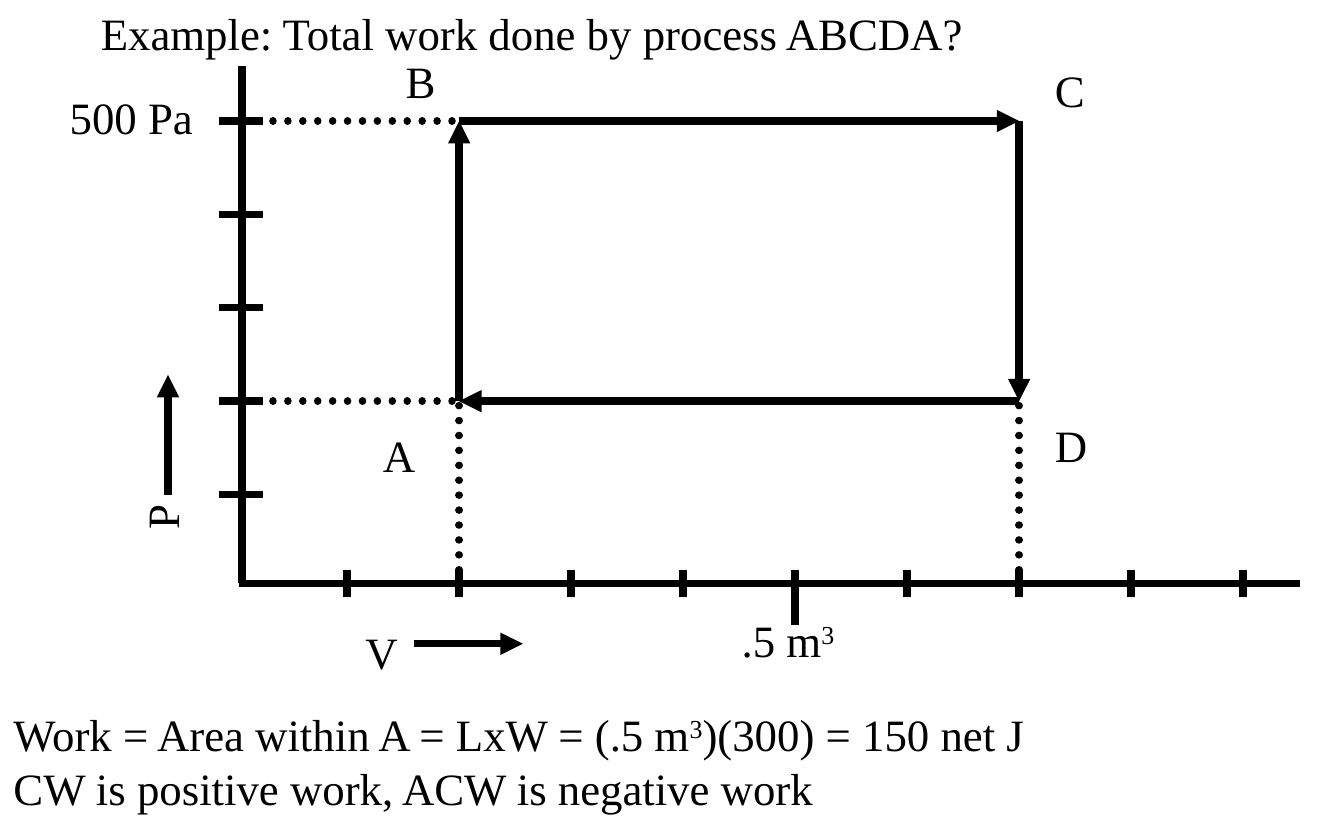
from lxml import etree
from pptx import Presentation
from pptx import util as u
from pptx.dml.color import RGBColor
from pptx.enum import dml, shapes, text
from pptx.oxml import ns

BLACK = RGBColor(0x00, 0x00, 0x00)
FONT = "Times New Roman"
LABEL_HEIGHT = 0.5

# Diagram grid: volume in columns, pressure in rows
ORIGIN_X, ORIGIN_Y = 1.75, 4.375
COLUMN, ROW = 10 / 12, 0.695
AXIS_X, AXIS_Y = 1.8, 4.34
V_LOW, V_MID, V_HIGH = 2, 5, 7
P_LOW, P_HIGH = 2, 5


def grid(volume, pressure):
    return ORIGIN_X + volume * COLUMN, ORIGIN_Y - pressure * ROW


def draw_line(slide, start, end, arrow=False, dotted=False):
    ends = [u.Inches(value) for value in (*start, *end)]
    stroke = slide.shapes.add_connector(shapes.MSO_CONNECTOR.STRAIGHT, *ends)
    stroke.line.color.rgb = BLACK
    stroke.line.width = u.Pt(4)
    properties = stroke._element.spPr
    outline = properties.find(ns.qn("a:ln"))
    if dotted:
        stroke.line.dash_style = dml.MSO_LINE.ROUND_DOT
        outline.set("cap", "rnd")
    if arrow:
        etree.SubElement(outline, ns.qn("a:tailEnd"), type="triangle")
    etree.SubElement(properties, ns.qn("a:effectLst"))


def place(shape, left, top, width, height):
    shape.left, shape.top = u.Inches(left), u.Inches(top)
    shape.width, shape.height = u.Inches(width), u.Inches(height)


def write(frame, lines, wrap=False):
    """Fill a frame; text between carets is superscript."""
    frame.word_wrap = wrap
    frame.auto_size = text.MSO_AUTO_SIZE.NONE
    frame.vertical_anchor = text.MSO_ANCHOR.TOP
    for number, line in enumerate(lines):
        paragraph = frame.add_paragraph() if number else frame.paragraphs[0]
        paragraph.alignment = text.PP_ALIGN.LEFT
        paragraph.space_before = u.Pt(0)
        for index, piece in enumerate(line.split("^")):
            if not piece:
                continue
            run = paragraph.add_run()
            run.text = piece
            run.font.name, run.font.size = FONT, u.Pt(24)
            run.font.color.rgb = BLACK
            if index % 2:
                run._r.get_or_add_rPr().set("baseline", "30000")


def add_label(slide, wording, left, top, width, rotation=0):
    label = slide.shapes.add_textbox(0, 0, 0, 0)
    place(label, left, top, width, LABEL_HEIGHT)
    label.rotation = rotation
    write(label.text_frame, [wording])


def add_axes(slide):
    draw_line(slide, (AXIS_X, 0.49), (AXIS_X, AXIS_Y))
    draw_line(slide, (AXIS_X - 0.02, AXIS_Y), (9.67, AXIS_Y))
    for pressure in range(1, 6):
        y = grid(0, pressure)[1]
        draw_line(slide, (1.63, y), (1.96, y))
    for volume in range(1, 10):
        x = grid(volume, 0)[0]
        bottom = 4.65 if volume == V_MID else 4.44
        draw_line(slide, (x, 4.24), (x, bottom))
    # Axis directions
    draw_line(slide, (3.08, 4.79), (3.89, 4.79), arrow=True)
    draw_line(slide, (1.25, 3.68), (1.25, 2.79), arrow=True)


def add_cycle(slide):
    a, b = grid(V_LOW, P_LOW), grid(V_LOW, P_HIGH)
    c, d = grid(V_HIGH, P_HIGH), grid(V_HIGH, P_LOW)
    # Dotted guides to the axes
    for corner in (a, b):
        draw_line(slide, (1.92, corner[1]), corner, dotted=True)
    for corner in (a, d):
        draw_line(slide, (corner[0], 4.24), corner, dotted=True)
    # Process A-B-C-D-A
    for start, end in ((a, b), (b, c), (c, d), (d, a)):
        draw_line(slide, start, end, arrow=True)


def add_labels(slide):
    for wording, left, top, width in (
        ("A", 2.75, 3.13, 0.45),
        ("B", 2.92, 0.35, 0.43),
        ("C", 7.75, 0.42, 0.43),
        ("D", 7.75, 3.06, 0.45),
        ("V", 2.62, 4.6, 0.44),
        ("500 Pa", 0.42, 0.62, 1.13),
        (".5 m^3^", 5.42, 4.51, 0.91),
    ):
        add_label(slide, wording, left, top, width)
    add_label(slide, "P", 1.01, 3.6, 0.38, rotation=270)


def add_title_and_answer(slide):
    title, answer = slide.placeholders
    place(title, 0.65, -0.01, 6.68, LABEL_HEIGHT)
    write(title.text_frame, ["Example: Total work done by process ABCDA?"])
    place(answer, 0, 5.21, 10, 0.91)
    write(answer.text_frame, [
        "Work = Area within A = LxW = (.5 m^3^)(300) = 150 net J",
        "CW is positive work, ACW is negative work",
    ], wrap=True)
    # Plain lines without bullets
    for paragraph in answer.text_frame.paragraphs:
        properties = paragraph._p.get_or_add_pPr()
        properties.set("marL", "0")
        properties.set("indent", "0")
        etree.SubElement(properties, ns.qn("a:buNone"))


def main():
    deck = Presentation()
    deck.slide_width, deck.slide_height = u.Inches(10), u.Inches(6.25)
    slide = deck.slides.add_slide(deck.slide_layouts[1])
    add_title_and_answer(slide)
    add_axes(slide)
    add_cycle(slide)
    add_labels(slide)
    deck.save("out.pptx")


if __name__ == "__main__":
    main()
